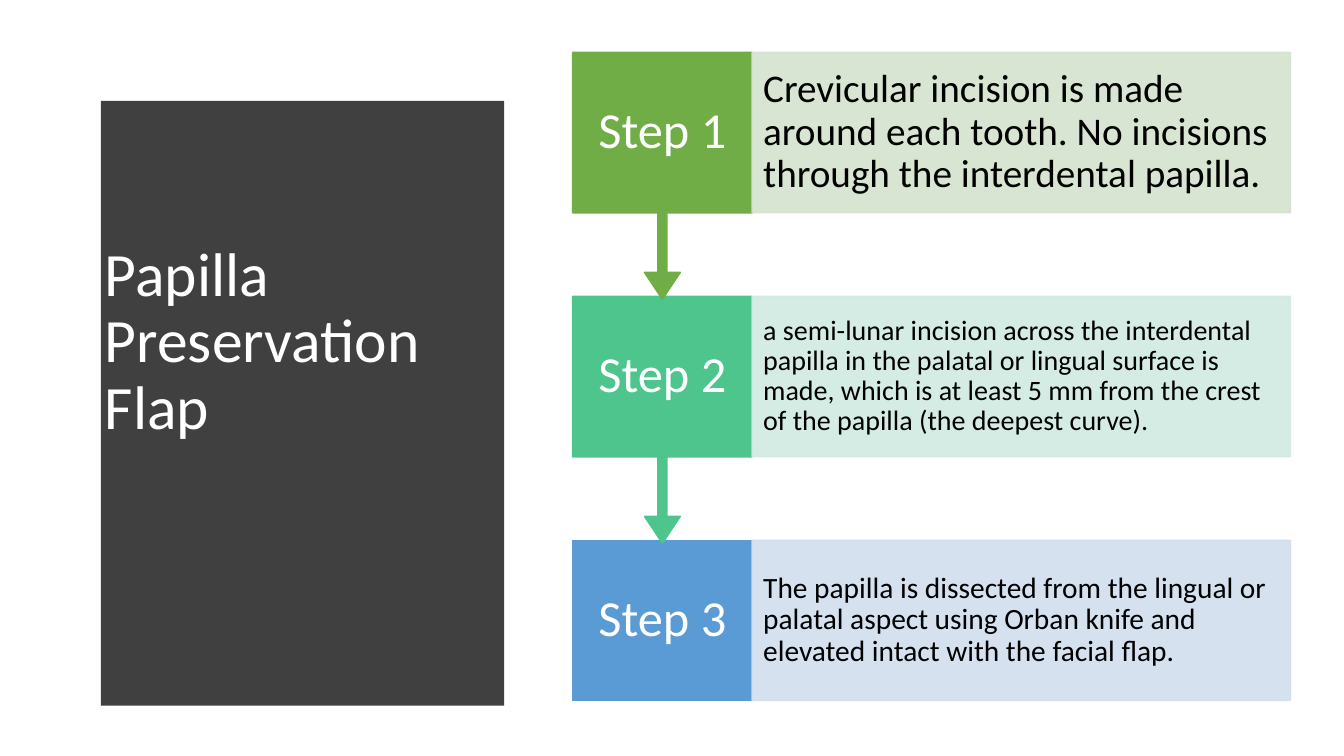
"""Build the Papilla Preservation Flap slide."""
import pptx
import pptx.dml.color
import pptx.enum.shapes
import pptx.enum.text
import pptx.oxml.ns
import pptx.util
from lxml import etree

Inches = pptx.util.Inches
RGBColor = pptx.dml.color.RGBColor
MSO_SHAPE = pptx.enum.shapes.MSO_SHAPE
PP_ALIGN = pptx.enum.text.PP_ALIGN

WHITE = RGBColor(0xFF, 0xFF, 0xFF)
BLACK = RGBColor(0, 0, 0)
CHARCOAL = RGBColor(0x40, 0x40, 0x40)
GREEN = RGBColor(0x70, 0xAD, 0x47)
TEAL = RGBColor(0x4D, 0xC5, 0x8D)
BLUE = RGBColor(0x5B, 0x9B, 0xD5)
PALE_GREEN = RGBColor(0xD5, 0xE3, 0xCF)
PALE_TEAL = RGBColor(0xD0, 0xEA, 0xE1)
PALE_BLUE = RGBColor(0xD2, 0xDE, 0xEF)

TOP, BOTTOM = 0.52, 6.96
ROW_PITCH, ROW_HEIGHT = 2.42, 1.59
CALLOUT_HEIGHT = 2.45
LABEL_LEFT, LABEL_WIDTH = 5.68, 1.78
DETAIL_LEFT, DETAIL_WIDTH = LABEL_LEFT + LABEL_WIDTH, 5.34

STEPS = [
    ("Step 1", GREEN, PALE_GREEN, 28,
     "Crevicular incision is made around each tooth. "
     "No incisions through the interdental papilla."),
    ("Step 2", TEAL, PALE_TEAL, 20,
     "a semi-lunar incision across the interdental papilla in the palatal or "
     "lingual surface is made, which is at least 5 mm from the crest of the "
     "papilla (the deepest curve)."),
    ("Step 3", BLUE, PALE_BLUE, 21,
     "The papilla is dissected from the lingual or palatal aspect using Orban "
     "knife and elevated intact with the facial flap."),
]


def write(shape, wording, size, color, align, side_inset, bottom_inset=0.05):
    """Put one formatted, vertically centred paragraph into a shape."""
    frame = shape.text_frame
    frame.text = wording
    frame.word_wrap = True
    frame.auto_size = pptx.enum.text.MSO_AUTO_SIZE.NONE
    frame.vertical_anchor = pptx.enum.text.MSO_ANCHOR.MIDDLE
    frame.margin_left = frame.margin_right = Inches(side_inset)
    frame.margin_top, frame.margin_bottom = Inches(0.05), Inches(bottom_inset)
    paragraph = frame.paragraphs[0]
    paragraph.alignment = align
    paragraph.line_spacing = 0.9
    paragraph.font.name = "Calibri"
    paragraph.font.size = pptx.util.Pt(size)
    paragraph.font.color.rgb = color


def add_block(slide, kind, left, top, width, height, color):
    """Add a preset shape whose fill and outline share one colour."""
    block = slide.shapes.add_shape(
        kind, Inches(left), Inches(top), Inches(width), Inches(height))
    block.shadow.inherit = False
    block.fill.solid()
    block.fill.fore_color.rgb = color
    block.line.color.rgb = color
    block.line.width = pptx.util.Pt(1)
    return block


def soften(block):
    """Make the fill and outline of a block 90 percent opaque."""
    for color in block.element.spPr.iter(pptx.oxml.ns.qn("a:srgbClr")):
        etree.SubElement(color, pptx.oxml.ns.qn("a:alpha"), val="90000")


def add_title_panel(slide):
    """Draw the dark panel with its bulging right edge."""
    left, corner, bulge, segments = 0.53, 5.08, 0.24, 40
    edge = []
    for index in range(segments + 1):
        share = index / segments
        x = corner + bulge * (1 - (2 * share - 1) ** 2)
        edge.append((x, TOP + share * (BOTTOM - TOP)))
    builder = slide.shapes.build_freeform(left, TOP, scale=Inches(1))
    builder.add_line_segments(edge + [(left, BOTTOM)], close=True)
    panel = builder.convert_to_shape()
    panel.shadow.inherit = False
    panel.fill.solid()
    panel.fill.fore_color.rgb = CHARCOAL
    panel.line.fill.background()


def place_title(slide):
    """Set the title in the upper middle of the dark panel."""
    title = slide.shapes.title
    title.left, title.top = Inches(0.94), Inches(1.11)
    title.width, title.height = Inches(3.74), Inches(5.24)
    write(title, "Papilla Preservation Flap", 44, WHITE, PP_ALIGN.LEFT, 0.1, 0.71)


def add_step(slide, row, label, color, pale, size, detail):
    """Add one step: a label, pointing down unless last, and its detail."""
    top = TOP + row * ROW_PITCH
    is_last = row == len(STEPS) - 1
    kind = MSO_SHAPE.RECTANGLE if is_last else MSO_SHAPE.DOWN_ARROW_CALLOUT
    height = ROW_HEIGHT if is_last else CALLOUT_HEIGHT
    marker = add_block(slide, kind, LABEL_LEFT, top, LABEL_WIDTH, height, color)
    if not is_last:
        for index, share in enumerate((0.05, 0.1, 0.15, 0.65)):
            marker.adjustments[index] = share
    write(marker, label, 36, WHITE, PP_ALIGN.CENTER, 0.13)
    box = add_block(slide, MSO_SHAPE.RECTANGLE, DETAIL_LEFT, top,
                    DETAIL_WIDTH, ROW_HEIGHT, pale)
    soften(box)
    write(box, detail, size, BLACK, PP_ALIGN.LEFT, 0.11)


def main():
    """Build and save the slide."""
    deck = pptx.Presentation()
    deck.slide_width, deck.slide_height = Inches(13.33), Inches(7.5)
    slide = deck.slides.add_slide(deck.slide_layouts.get_by_name("Title Only"))
    add_title_panel(slide)
    place_title(slide)
    title = slide.shapes.title.element
    title.getparent().append(title)
    for row, step in reversed(list(enumerate(STEPS))):
        add_step(slide, row, *step)
    deck.save("out.pptx")


if __name__ == "__main__":
    main()
